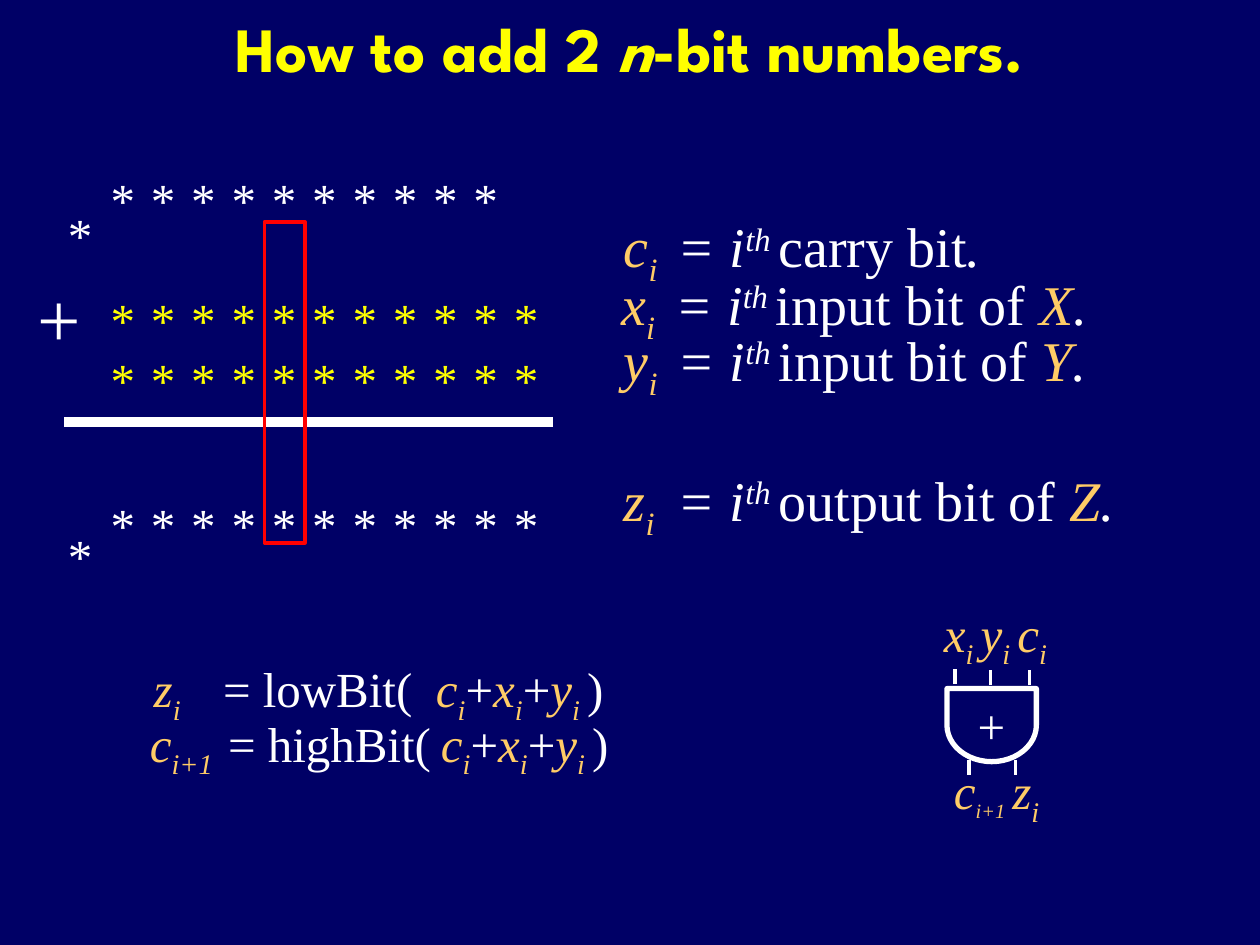
from lxml import etree
from pptx import Presentation
from pptx.dml.color import RGBColor
from pptx.enum.shapes import MSO_CONNECTOR, MSO_SHAPE
from pptx.enum.text import MSO_ANCHOR, PP_ALIGN
from pptx.oxml.ns import qn
from pptx.util import Inches, Pt

NAVY = RGBColor(0x00, 0x00, 0x66)
WHITE = RGBColor(0xFF, 0xFF, 0xFF)
YELLOW = RGBColor(0xFF, 0xFF, 0x00)
GOLD = RGBColor(0xFF, 0xCC, 0x66)
RED = RGBColor(0xFF, 0x00, 0x00)
SERIF = "Times New Roman"
HEAD = "League Spartan"

TOP, MID, BOTTOM = MSO_ANCHOR.TOP, MSO_ANCHOR.MIDDLE, MSO_ANCHOR.BOTTOM
LEFT, CENTER = PP_ALIGN.LEFT, PP_ALIGN.CENTER
STRAIGHT = MSO_CONNECTOR.STRAIGHT
RECT, DELAY = MSO_SHAPE.RECTANGLE, MSO_SHAPE.FLOWCHART_DELAY

# style: colour, italic, baseline in percent
STYLES = {
    "plain": (WHITE, False, 0),
    "ital": (WHITE, True, 0),
    "sup": (WHITE, True, 30),
    "var": (GOLD, True, 0),
    "sub": (GOLD, True, -25),
}


def add_box(slide, left, top, width, height, anchor):
    frame = slide.shapes.add_textbox(
        Inches(left), Inches(top), Inches(width), Inches(height)).text_frame
    frame.word_wrap = True
    frame.vertical_anchor = anchor
    frame.margin_left = frame.margin_right = Inches(0.3)
    frame.margin_top = frame.margin_bottom = Inches(0.05)
    return frame


def add_stars(slide, left, top, rows):
    """Stack one star per (colour, space before) row, aligned at the bottom."""
    frame = add_box(slide, left, top, 0.83, 3.14, BOTTOM)
    for n, (color, gap) in enumerate(rows):
        par = frame.paragraphs[0] if n == 0 else frame.add_paragraph()
        par.text = "*"
        par.alignment = CENTER
        par.space_before = Pt(gap if n else 0)
        par.font.name, par.font.size = SERIF, Pt(28)
        par.font.color.rgb = color


def add_math(slide, box, runs, size=28, anchor=TOP, align=LEFT, tabs=()):
    """Write (text, style[, size]) runs on one line, with tab stops in inches."""
    par = add_box(slide, *box, anchor).paragraphs[0]
    par.alignment = align
    par.font.name, par.font.size = SERIF, Pt(size)
    for text, style, *own in runs:
        run = par.add_run()
        run.text = text
        color, italic, base = STYLES[style]
        run.font.color.rgb = color
        run.font.italic = italic
        if own:
            run.font.size = Pt(own[0])
        if base:
            run.font._element.set("baseline", str(base * 1000))
    if tabs:
        stops = etree.Element(qn("a:tabLst"))
        for stop in tabs:
            etree.SubElement(stops, qn("a:tab"), pos=str(Inches(stop)), algn="l")
        props = par._p.get_or_add_pPr()
        rest = props.find(qn("a:defRPr"))
        if rest is None:
            props.append(stops)
        else:
            rest.addprevious(stops)


def add_line(slide, x1, y1, x2, y2, weight):
    line = slide.shapes.add_connector(
        STRAIGHT, Inches(x1), Inches(y1), Inches(x2), Inches(y2))
    line.line.color.rgb = WHITE
    line.line.width = Pt(weight)
    etree.SubElement(line._element.spPr, qn("a:effectLst"))


def add_frame(slide, kind, left, top, width, height, color, weight):
    shape = slide.shapes.add_shape(
        kind, Inches(left), Inches(top), Inches(width), Inches(height))
    shape.shadow.inherit = False
    shape.fill.background()
    shape.line.color.rgb = color
    shape.line.width = Pt(weight)
    return shape


def add_title(slide):
    title = slide.shapes.title
    title.left, title.top = Inches(0.75), Inches(-0.25)
    title.width, title.height = Inches(8.5), Inches(1.25)
    title.text_frame.vertical_anchor = MID
    par = title.text_frame.paragraphs[0]
    par.alignment = CENTER
    font = par.font
    font.name, font.size, font.bold = HEAD, Pt(36), True
    font.color.rgb = YELLOW
    for text, italic in (("How to add 2 ", False), ("n", True),
                         ("-bit numbers.", False)):
        run = par.add_run()
        run.text = text
        run.font.italic = italic


def add_sum(slide):
    rows = [(WHITE, 0), (YELLOW, 35), (YELLOW, 1), (WHITE, 49)]
    for col in range(11):
        add_stars(slide, 0.56 + 0.32 * col, 1.3, rows if col < 10 else rows[1:])
    add_stars(slide, 0.22, 1.55, [(WHITE, 0), (WHITE, 150)])
    add_line(slide, 4.39, 3.35, 0.51, 3.35, 6)
    add_math(slide, (0, 2.1, 0.81, 0.83), [("+", "plain")], 44, MID)
    add_frame(slide, RECT, 2.1, 1.76, 0.32, 2.55, RED, 2)


def add_terms(slide):
    terms = [("c", "carry bit", "", 4.65, 1.67),
             ("x", "input bit of ", "X", 4.63, 2.13),
             ("y", "input bit of ", "Y", 4.65, 2.57),
             ("z", "output bit of ", "Z", 4.65, 3.68)]
    for name, role, whole, left, top in terms:
        runs = [(name, "var"), ("i", "sub"), ("\t= i", "ital"),
                ("th ", "sup"), (role, "plain")]
        if whole:
            runs.append((whole, "var"))
        add_math(slide, (left, top, 4.62, 0.63), runs + [(".", "ital")],
                 32, MID, tabs=[0.43])


def add_rules(slide):
    total = [("c", "var"), ("i", "sub"), ("+", "plain"),
             ("x", "var"), ("i", "sub"), ("+", "plain"),
             ("y", "var"), ("i ", "sub"), (")", "plain")]
    rules = [("z", "i", "lowBit", (0.92, 5.18, 4.32, 0.57), (0.55, 2.24)),
             ("c", "i+1", "highBit", (0.89, 5.61, 4.4, 0.57), (0.62, 2.31))]
    for name, sub, func, box, tabs in rules:
        runs = [(name, "var"), (sub, "sub"), (f"\t= {func}(\t", "plain")]
        add_math(slide, box, runs + total, tabs=tabs)


def add_gate(slide):
    gate = add_frame(slide, DELAY, 7.58, 5.4, 0.58, 0.71, WHITE, 3)
    gate.rotation = 90
    add_math(slide, (7.46, 5.47, 0.82, 0.57), [("+", "plain")])
    for x, y in ((7.58, 5.31), (7.86, 5.32), (8.17, 5.32),
                 (7.69, 6.03), (8.06, 6.03)):
        add_line(slide, x, y + 0.12, x, y, 2)
    add_math(slide, (7.12, 4.77, 1.56, 0.57),
             [("x", "var"), ("i ", "sub"), ("y", "var"), ("i ", "sub"),
              ("c", "var"), ("i", "sub")], anchor=MID, align=CENTER)
    add_math(slide, (7.2, 6.02, 1.42, 0.57),
             [("c", "var"), ("i+1", "sub", 20), (" ", "sub"),
              ("z", "var"), ("i", "sub")], anchor=MID, align=CENTER)


def main():
    deck = Presentation()
    deck.slide_width, deck.slide_height = Inches(10), Inches(7.5)
    slide = deck.slides.add_slide(deck.slide_layouts[5])
    slide.background.fill.solid()
    slide.background.fill.fore_color.rgb = NAVY
    add_title(slide)
    add_sum(slide)
    add_terms(slide)
    add_rules(slide)
    add_gate(slide)
    deck.save("out.pptx")


if __name__ == "__main__":
    main()
